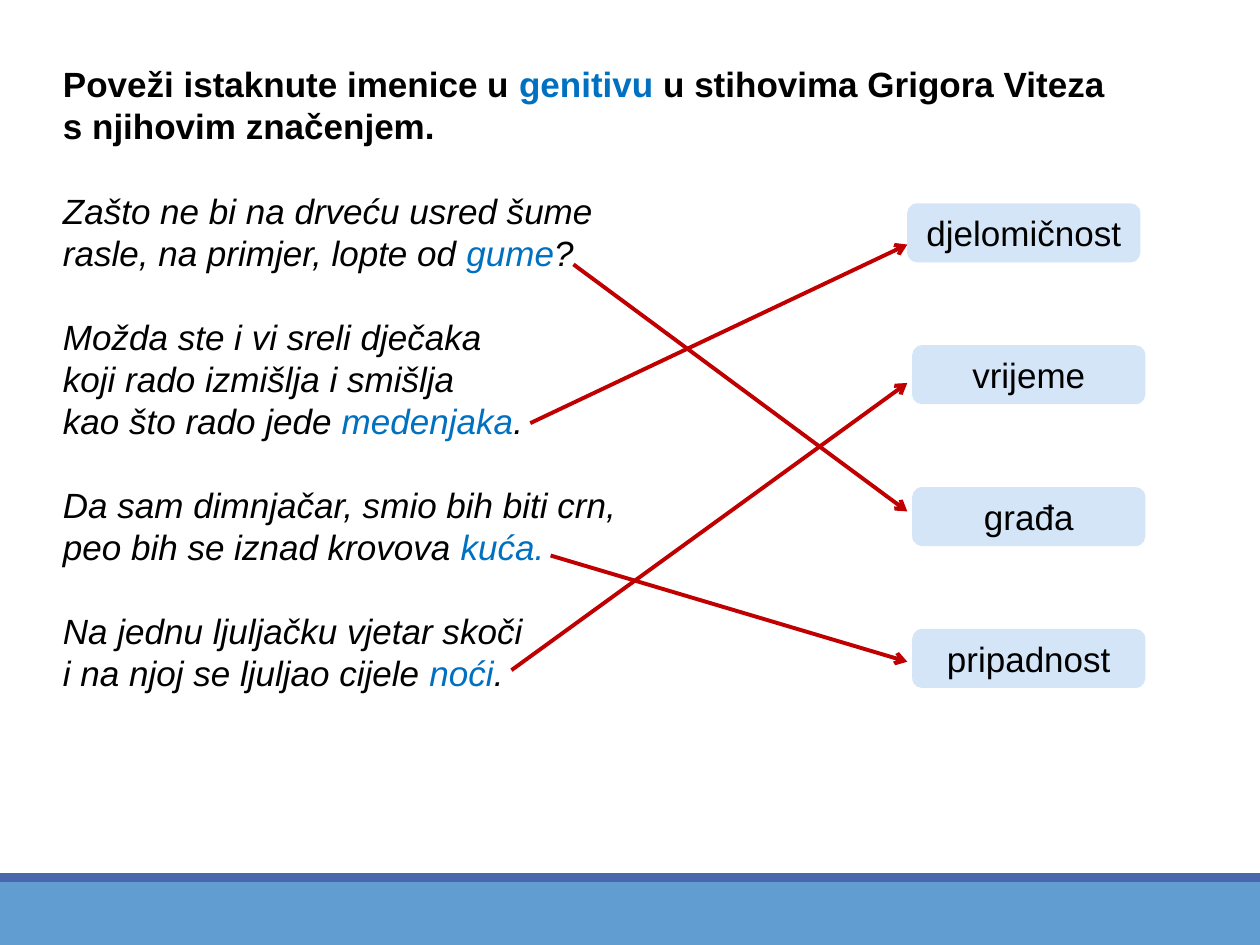
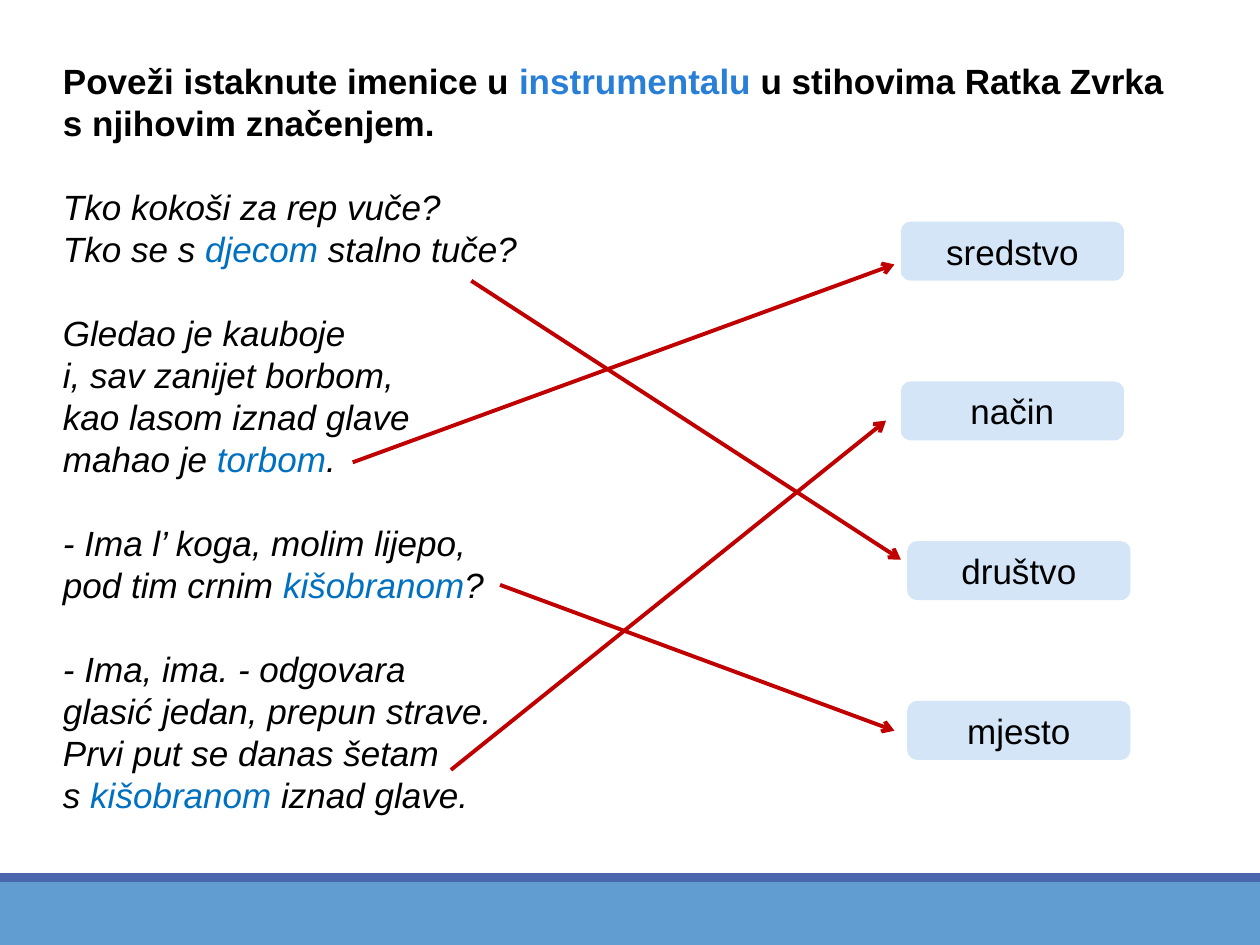
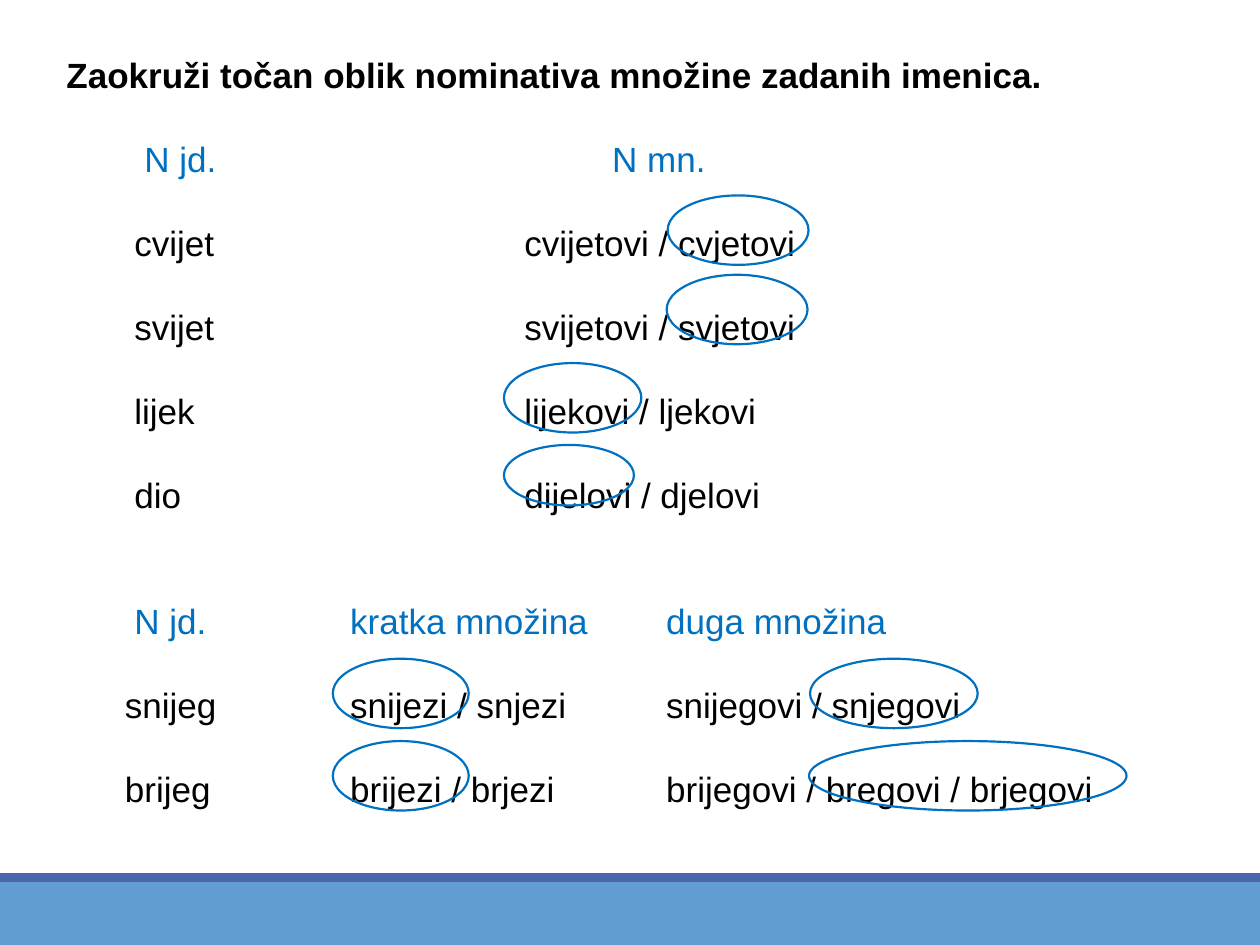
from dataclasses import dataclass

from lxml import etree
from pptx import Presentation
from pptx.dml.color import RGBColor
from pptx.enum.shapes import MSO_CONNECTOR, MSO_SHAPE
from pptx.enum.text import PP_ALIGN
from pptx.oxml.ns import qn
from pptx.util import Cm, Pt

RECTANGLE, ROUNDED, OVAL = MSO_SHAPE.RECTANGLE, MSO_SHAPE.ROUNDED_RECTANGLE, MSO_SHAPE.OVAL
STRAIGHT = MSO_CONNECTOR.STRAIGHT
CENTER = PP_ALIGN.CENTER


@dataclass(frozen=True)
class Theme:
    font: str = "Arial"
    size: int = 20
    line_pitch: int = 24
    text: str = "000000"
    accent: str = "0070C0"
    light_accent: str = "297FD5"
    meaning: str = "D4E5F7"
    arrow: str = "C00000"
    band: str = "629DD1"
    band_edge: str = "4A66AC"


theme = Theme()


def add_shape(slide, kind, box, fill=None, line=None):
    shape = slide.shapes.add_shape(kind, *[Cm(v) for v in box])
    shape.shadow.inherit = False
    if fill:
        shape.fill.solid()
        shape.fill.fore_color.rgb = RGBColor.from_string(fill)
    else:
        shape.fill.background()
    if line:
        shape.line.color.rgb = RGBColor.from_string(line)
        shape.line.width = Pt(1.25)
    else:
        shape.line.fill.background()
    return shape


def write(frame, text, color=theme.text, accent=theme.accent, bold=False,
          italic=False, gap=0, tabs=()):
    """Add one paragraph; words between asterisks take the accent colour."""
    paragraph = frame.paragraphs[0] if not frame.text else frame.add_paragraph()
    paragraph.line_spacing = Pt(theme.line_pitch)
    paragraph.space_before = Pt(gap * theme.line_pitch)
    if tabs:
        stops = etree.SubElement(paragraph._p.get_or_add_pPr(), qn("a:tabLst"))
        for stop in tabs:
            etree.SubElement(stops, qn("a:tab"), pos=str(Cm(stop)), algn="l")
    font = paragraph.font
    font.name, font.size = theme.font, Pt(theme.size)
    font.bold, font.italic = bold, italic
    font.color.rgb = RGBColor.from_string(color)
    for i, part in enumerate(text.split("*")):
        if part:
            run = paragraph.add_run()
            run.text = part
            if i % 2:
                run.font.color.rgb = RGBColor.from_string(accent)
    return paragraph


prs = Presentation()
prs.slide_width, prs.slide_height = Cm(25.4), Cm(19.05)
blank = prs.slide_layouts[6]

# Matching exercises: verses on the left, meanings on the right
exercises = [
    dict(
        title=["Poveži istaknute imenice u *genitivu* u stihovima Grigora Viteza",
               "s njihovim značenjem."],
        title_accent=theme.accent,
        text_box=(1.09, 1.09, 23.4, 14.73),
        stanzas=[
            ["Zašto ne bi na drveću usred šume",
             "rasle, na primjer, lopte od *gume*?"],
            ["Možda ste i vi sreli dječaka",
             "koji rado izmišlja i smišlja",
             "kao što rado jede *medenjaka*."],
            ["Da sam dimnjačar, smio bih biti crn,",
             "peo bih se iznad krovova *kuća.*"],
            ["Na jednu ljuljačku vjetar skoči",
             "i na njoj se ljuljao cijele *noći*."],
        ],
        meanings=[("djelomičnost", 18.29), ("vrijeme", 18.39),
                  ("građa", 18.39), ("pripadnost", 18.39)],
        meaning_top=4.1, meaning_step=2.86, meaning_width=4.7,
        arrows=[(11.56, 5.33, 18.29, 10.31), (10.69, 8.53, 18.29, 4.93),
                (11.1, 11.2, 18.29, 13.34), (10.31, 13.51, 18.29, 7.72)],
    ),
    dict(
        title=["Poveži istaknute imenice u *instrumentalu* u stihovima Ratka Zvrka",
               "s njihovim značenjem."],
        title_accent=theme.light_accent,
        text_box=(1.09, 1.02, 23.4, 17.3),
        stanzas=[
            ["Tko kokoši za rep vuče?",
             "Tko se s *djecom* stalno tuče?"],
            ["Gledao je kauboje",
             "i, sav zanijet borbom,",
             "kao lasom iznad glave",
             "mahao je *torbom*."],
            ["- Ima l’ koga, molim lijepo,",
             "pod tim crnim *kišobranom*?"],
            ["- Ima, ima. - odgovara",
             "glasić jedan, prepun strave.",
             "Prvi put se danas šetam",
             "s *kišobranom* iznad glave."],
        ],
        meanings=[("sredstvo", 18.16), ("način", 18.16),
                  ("društvo", 18.29), ("mjesto", 18.29)],
        meaning_top=4.47, meaning_step=3.22, meaning_width=4.5,
        arrows=[(9.5, 5.66, 18.16, 11.28), (7.11, 9.32, 18.03, 5.33),
                (10.08, 11.79, 18.03, 14.73), (9.09, 15.52, 17.86, 8.48)],
    ),
]

for exercise in exercises:
    slide = prs.slides.add_slide(blank)

    # Title and verses
    verses = slide.shapes.add_textbox(*[Cm(v) for v in exercise["text_box"]]).text_frame
    verses.word_wrap = True
    verses.margin_left = verses.margin_right = verses.margin_top = Cm(0.18)
    for line in exercise["title"]:
        write(verses, line, accent=exercise["title_accent"], bold=True)
    for stanza in exercise["stanzas"]:
        for i, line in enumerate(stanza):
            write(verses, line, italic=True, gap=1 if i == 0 else 0)

    # Meanings
    for i, (meaning, left) in enumerate(exercise["meanings"]):
        top = exercise["meaning_top"] + i * exercise["meaning_step"]
        label = add_shape(slide, ROUNDED, (left, top, exercise["meaning_width"], 1.19),
                          fill=theme.meaning)
        write(label.text_frame, meaning).alignment = CENTER

    # Arrows from verse to meaning
    for ends in exercise["arrows"]:
        arrow = slide.shapes.add_connector(STRAIGHT, *[Cm(v) for v in ends])
        arrow.line.color.rgb = RGBColor.from_string(theme.arrow)
        arrow.line.width = Pt(2.25)
        etree.SubElement(arrow.line._get_or_add_ln(), qn("a:tailEnd"), type="arrow")
        etree.SubElement(arrow._element.spPr, qn("a:effectLst"))

# Plural forms: columns set by tab stops
slide = prs.slides.add_slide(blank)
plurals = slide.shapes.add_textbox(Cm(1.09), Cm(0.95), Cm(22.43), Cm(17.3)).text_frame
plurals.word_wrap = True
write(plurals, "Zaokruži točan oblik nominativa množine zadanih imenica.", bold=True)

plural_groups = [
    dict(gap=1, header=["N jd.", "N mn."], header_tabs=(1.57, 11),
         rows=[["cvijet", "cvijetovi / cvjetovi"],
               ["svijet", "svijetovi / svjetovi"],
               ["lijek", "lijekovi / ljekovi"],
               ["dio", "dijelovi / djelovi"]],
         row_tabs=(1.37, 9.23)),
    dict(gap=2, header=["N jd.", "kratka množina", "duga množina"],
         header_tabs=(1.37, 5.72, 12.09),
         rows=[["snijeg", "snijezi / snjezi", "snijegovi / snjegovi"],
               ["brijeg", "brijezi / brjezi", "brijegovi / bregovi / brjegovi"]],
         row_tabs=(1.18, 5.72, 12.09)),
]
for group in plural_groups:
    write(plurals, "\t" + "\t".join(group["header"]), color=theme.accent,
          gap=group["gap"], tabs=group["header_tabs"])
    for row in group["rows"]:
        write(plurals, "\t" + "\t".join(row), gap=1, tabs=group["row_tabs"])

# Circles around the correct forms
for circle in [(13.46, 3.94, 2.84, 1.4), (13.44, 5.54, 2.84, 1.4),
               (10.16, 7.32, 2.77, 1.4), (10.16, 8.97, 2.62, 1.22),
               (6.71, 13.28, 2.74, 1.4), (16.33, 13.28, 3.38, 1.4),
               (6.71, 14.94, 2.74, 1.4), (16.31, 14.94, 6.4, 1.4)]:
    add_shape(slide, OVAL, circle, line=theme.accent)

# Bottom bands, moved to the layout that all slides share
for top, height, color in [(17.78, 1.27, theme.band), (17.6, 0.18, theme.band_edge)]:
    band = add_shape(slide, RECTANGLE, (0, top, 25.4, height), fill=color)
    blank.shapes.element.append(band.element)

prs.save("out.pptx")
